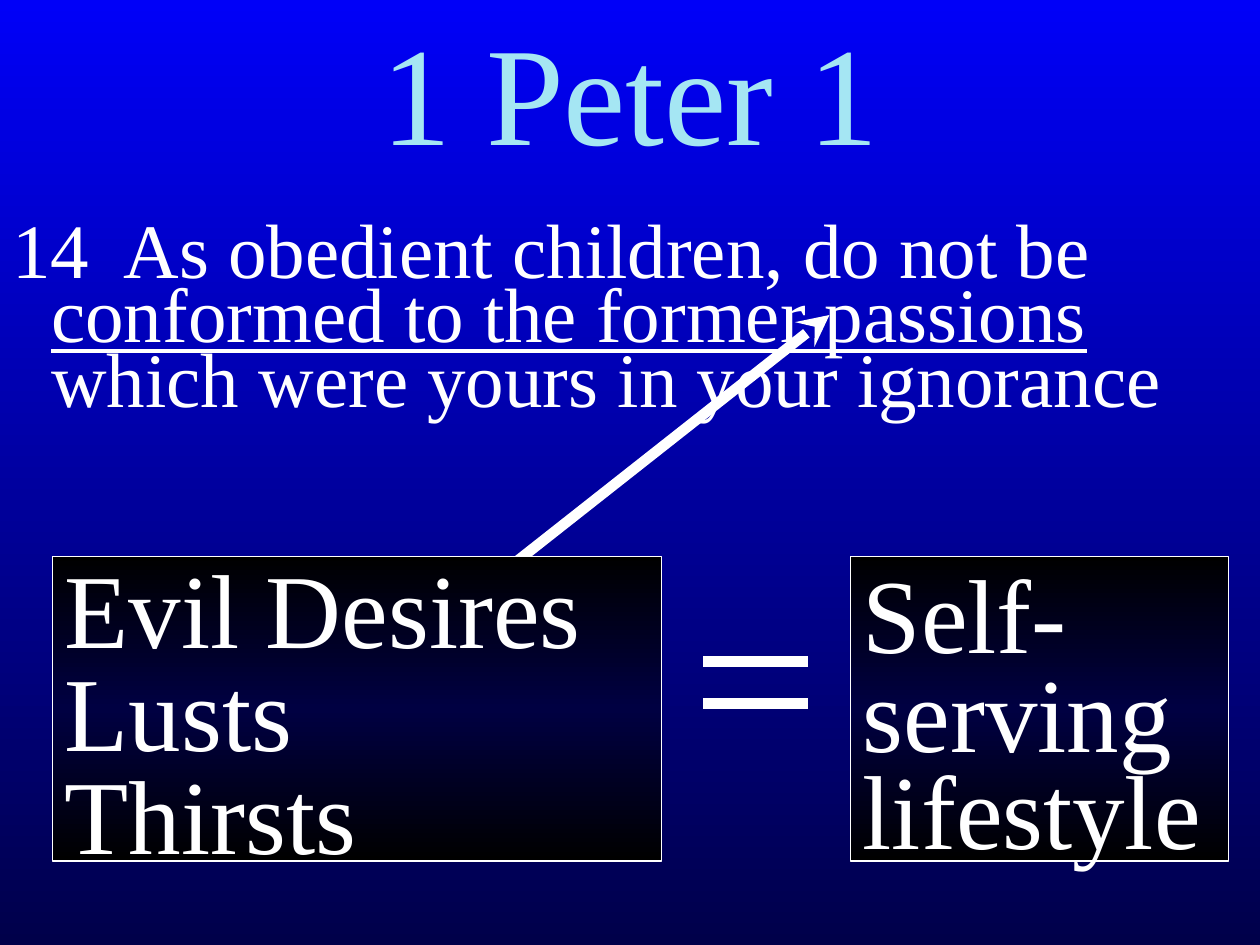
from lxml.etree import SubElement
from pptx import Presentation
from pptx.dml.color import RGBColor
from pptx.enum.shapes import MSO_CONNECTOR as Conn, MSO_SHAPE as Shape
from pptx.enum.text import MSO_ANCHOR as Anchor, PP_ALIGN as Align
from pptx.oxml.ns import qn
from pptx.util import Inches, Pt

COLS, ROWS = 120, 90
UNIT = Inches(10) // COLS
WHITE, TITLE = "FFFFFF", "A5E6F3"
FRAME = dict(word_wrap=True, vertical_anchor=Anchor.TOP,
             margin_left=Inches(0.1), margin_right=Inches(0.1),
             margin_top=Inches(0.13), margin_bottom=Inches(0.05))


def grid(*cells):
    """Turn grid columns and rows into lengths."""
    return [c * UNIT for c in cells]


def rgb(value):
    """Make a colour from a hex string."""
    return RGBColor.from_string(value)


def set_all(obj, values):
    """Set each named attribute of an object."""
    for name, value in values.items():
        setattr(obj, name, value)


def shade(fill, element, colors):
    """Fill from top to bottom with evenly spaced colours."""
    fill.gradient()
    fill.gradient_angle = 270
    stops = next(element.iter(qn("a:gsLst")))
    for stop in list(stops):
        stops.remove(stop)
    for i, color in enumerate(colors):
        stop = SubElement(stops, qn("a:gs"), pos=str(i * 100000 // (len(colors) - 1)))
        SubElement(stop, qn("a:srgbClr"), val=color)


def add_run(p, text, size, color=WHITE, underline=False):
    """Append a formatted run to a paragraph."""
    r = p.add_run()
    r.text = text
    set_all(r.font, dict(name="Times New Roman", size=Pt(size), underline=underline))
    r.font.color.rgb = rgb(color)


def add_title(s, box, text):
    """Place the centred title."""
    tf = s.shapes.add_textbox(*grid(*box)).text_frame
    set_all(tf, FRAME | dict(vertical_anchor=Anchor.MIDDLE, margin_top=Inches(0.05)))
    p = tf.paragraphs[0]
    set_all(p, dict(alignment=Align.CENTER, line_spacing=0.8))
    add_run(p, text, 80, TITLE)


def add_verse(s, box, parts):
    """Place the verse with a hanging indent from (text, underline) parts."""
    tf = s.shapes.add_textbox(*grid(*box)).text_frame
    set_all(tf, FRAME)
    p = tf.paragraphs[0]
    p.line_spacing = 0.7
    indent = Inches(0.31)
    for name, value in dict(marL=indent, indent=-indent).items():
        p._p.get_or_add_pPr().set(name, str(value))
    for text, underline in parts:
        add_run(p, text, 44, underline=underline)


def add_panel(s, box, lines):
    """Place a shaded panel from (text, line spacing) pairs."""
    sp = s.shapes.add_shape(Shape.RECTANGLE, *grid(*box))
    sp.shadow.inherit = False
    shade(sp.fill, sp.element, ["000000", "000042", "000000"])
    sp.line.color.rgb = rgb(WHITE)
    sp.line.width = Pt(1)
    tf = sp.text_frame
    set_all(tf, FRAME)
    for i, (text, spacing) in enumerate(lines):
        p = tf.add_paragraph() if i else tf.paragraphs[0]
        set_all(p, dict(alignment=Align.LEFT, line_spacing=spacing,
                        space_before=Pt(5 if i else 0)))
        add_run(p, text, 60)


def add_line(s, ends, arrow=False):
    """Draw a thick white line, with an arrowhead if asked."""
    cx = s.shapes.add_connector(Conn.STRAIGHT, *grid(*ends))
    cx.line.color.rgb = rgb(WHITE)
    cx.line.width = Pt(6)
    if arrow:
        SubElement(cx.line._get_or_add_ln(), qn("a:tailEnd"), type="stealth")
    SubElement(cx.element.spPr, qn("a:effectLst"))


def add_equals(s, box):
    """Draw an equals sign along the top and bottom of a box."""
    x, y, w, h = box
    for row in (y, y + h):
        add_line(s, (x, row, x + w, row))


def main():
    """Build and save the slide."""
    prs = Presentation()
    set_all(prs, dict(slide_width=COLS * UNIT, slide_height=ROWS * UNIT))
    s = prs.slides.add_slide(prs.slide_layouts[6])
    shade(s.background.fill, s.element, ["0000F8", "00004A"])
    add_title(s, (0, 0, COLS, 20), "1 Peter 1")
    add_verse(s, (0, 20, COLS, 64), [
        ("14  As obedient children, do not be ", False),
        ("conformed to the former passions", True),
        (" which were yours in your ignorance", False)])
    add_equals(s, (67, 63, 10, 4))
    add_panel(s, (81, 53, 36, 29), [("Self-", 0.8), ("serving", 0.7), ("lifestyle", 0.7)])
    add_line(s, (46, 56, 79, 30), arrow=True)
    add_panel(s, (5, 53, 58, 29), [(t, 0.75) for t in ("Evil Desires", "Lusts", "Thirsts")])
    prs.save("out.pptx")


if __name__ == "__main__":
    main()
